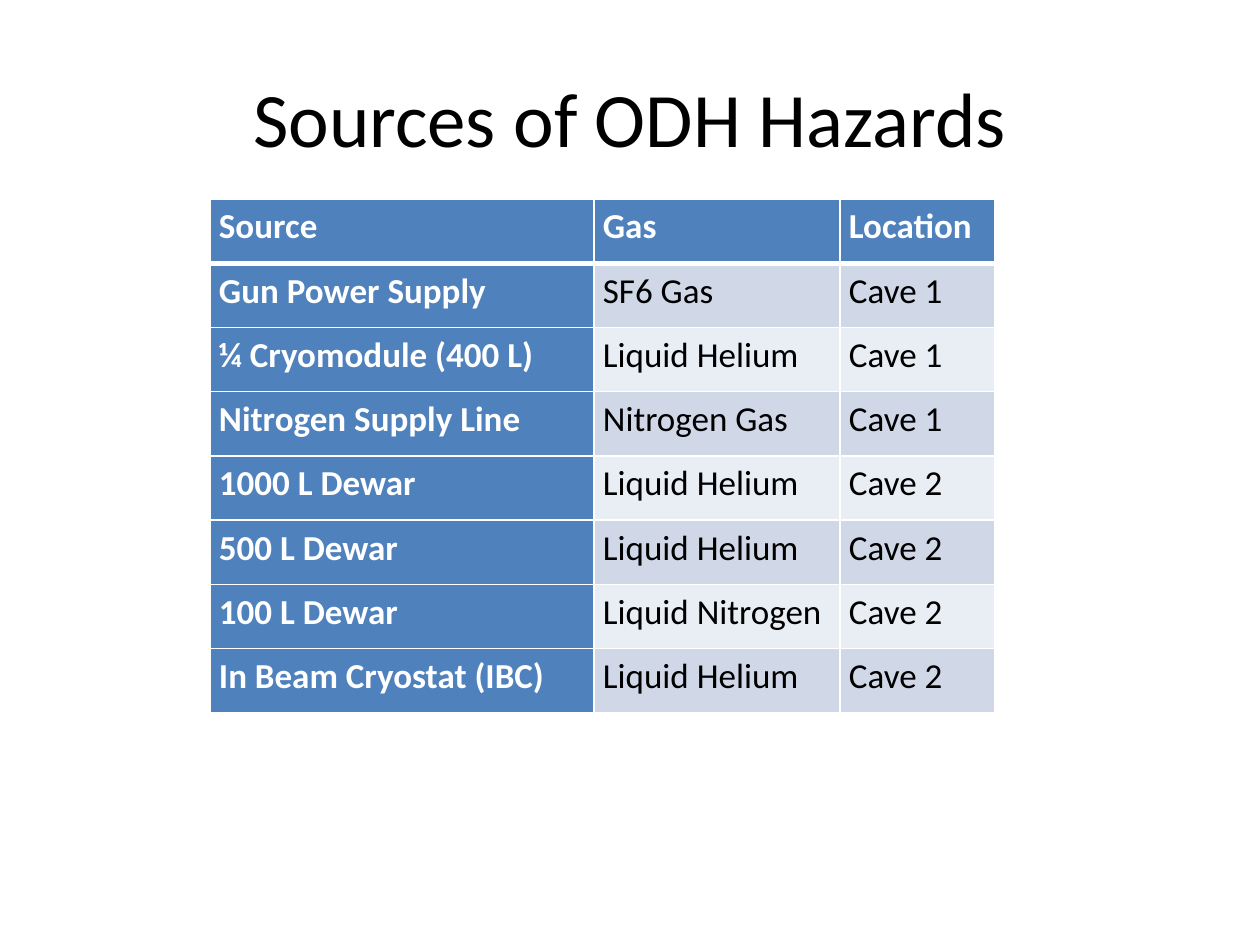
import lxml.etree
import pptx
import pptx.dml.color
import pptx.enum.text
import pptx.oxml.ns
import pptx.util

PX = pptx.util.Inches(1) / 126
WHITE = pptx.dml.color.RGBColor(0xFF, 0xFF, 0xFF)
BLACK = pptx.dml.color.RGBColor(0x00, 0x00, 0x00)
BLUE = pptx.dml.color.RGBColor(0x4F, 0x81, 0xBD)
BANDS = (
    pptx.dml.color.RGBColor(0xD0, 0xD8, 0xE8),
    pptx.dml.color.RGBColor(0xE9, 0xED, 0xF4),
)

HAZARDS = [
    ("Source", "Gas", "Location"),
    ("Gun Power Supply", "SF6 Gas", "Cave 1"),
    ("¼ Cryomodule (400 L)", "Liquid Helium", "Cave 1"),
    ("Nitrogen Supply Line", "Nitrogen Gas", "Cave 1"),
    ("1000 L Dewar", "Liquid Helium", "Cave 2"),
    ("500 L Dewar", "Liquid Helium", "Cave 2"),
    ("100 L Dewar", "Liquid Nitrogen", "Cave 2"),
    ("In Beam Cryostat (IBC)", "Liquid Helium", "Cave 2"),
]


def emu(px):
    return pptx.util.Emu(round(px * PX))


def write_text(frame, text, *, size, color, font, bold=False, align=None, spacing=None):
    paragraph = frame.paragraphs[0]
    paragraph.alignment = align
    paragraph.line_spacing = spacing
    run = paragraph.add_run()
    run.text = text
    run.font.name = font
    run.font.size = pptx.util.Pt(size)
    run.font.bold = bold
    run.font.color.rgb = color


def set_borders(cell, color, **widths):
    """Draw the given sides (L, R, T, B) in points, ahead of the cell's fill."""
    properties = cell._tc.get_or_add_tcPr()
    for position, side in enumerate("LRTB"):
        line = lxml.etree.Element(
            pptx.oxml.ns.qn(f"a:ln{side}"), w=str(pptx.util.Pt(widths[side]))
        )
        fill = lxml.etree.SubElement(line, pptx.oxml.ns.qn("a:solidFill"))
        lxml.etree.SubElement(fill, pptx.oxml.ns.qn("a:srgbClr"), val=str(color))
        properties.insert(position, line)


class SlideBuilder:
    """Holds the text style and the slide being filled."""

    def __init__(self, slide, font="Calibri"):
        self.slide = slide
        self.font = font

    def title(self, text, left, top, width, height):
        heading = self.slide.shapes.title
        heading.left, heading.top = emu(left), emu(top)
        heading.width, heading.height = emu(width), emu(height)
        heading.text_frame.vertical_anchor = pptx.enum.text.MSO_ANCHOR.MIDDLE
        write_text(heading.text_frame, text, size=44, color=BLACK, font=self.font,
                   align=pptx.enum.text.PP_ALIGN.CENTER)

    def table(self, rows, left, top, column_widths, height):
        table = self.slide.shapes.add_table(
            len(rows), len(column_widths),
            emu(left), emu(top), emu(sum(column_widths)), emu(height),
        ).table
        table.first_col = True
        for column, width in zip(table.columns, column_widths):
            column.width = emu(width)
        for row_index, values in enumerate(rows):
            for column_index, value in enumerate(values):
                self.cell(table.cell(row_index, column_index), value,
                          row_index, column_index)

    def cell(self, cell, value, row_index, column_index):
        heading = row_index == 0 or column_index == 0
        cell.margin_left = cell.margin_right = emu(9)
        cell.margin_top = cell.margin_bottom = 0
        cell.fill.solid()
        cell.fill.fore_color.rgb = BLUE if heading else BANDS[(row_index - 1) % 2]
        set_borders(cell, WHITE, L=1, R=1,
                    T=3 if row_index == 1 else 1, B=3 if row_index == 0 else 1)
        write_text(cell.text_frame, value, size=20, font=self.font, bold=heading,
                   color=WHITE if heading else BLACK, spacing=1.15)


def main():
    presentation = pptx.Presentation()
    presentation.slide_width = emu(1260)
    presentation.slide_height = emu(945)
    title_only = presentation.slide_layouts[5]
    builder = SlideBuilder(presentation.slides.add_slide(title_only))
    builder.title("Sources of ODH Hazards", 63, 38, 1134, 157)
    builder.table(HAZARDS, 210, 199, (384, 246, 155), 514)
    presentation.save("out.pptx")


if __name__ == "__main__":
    main()
